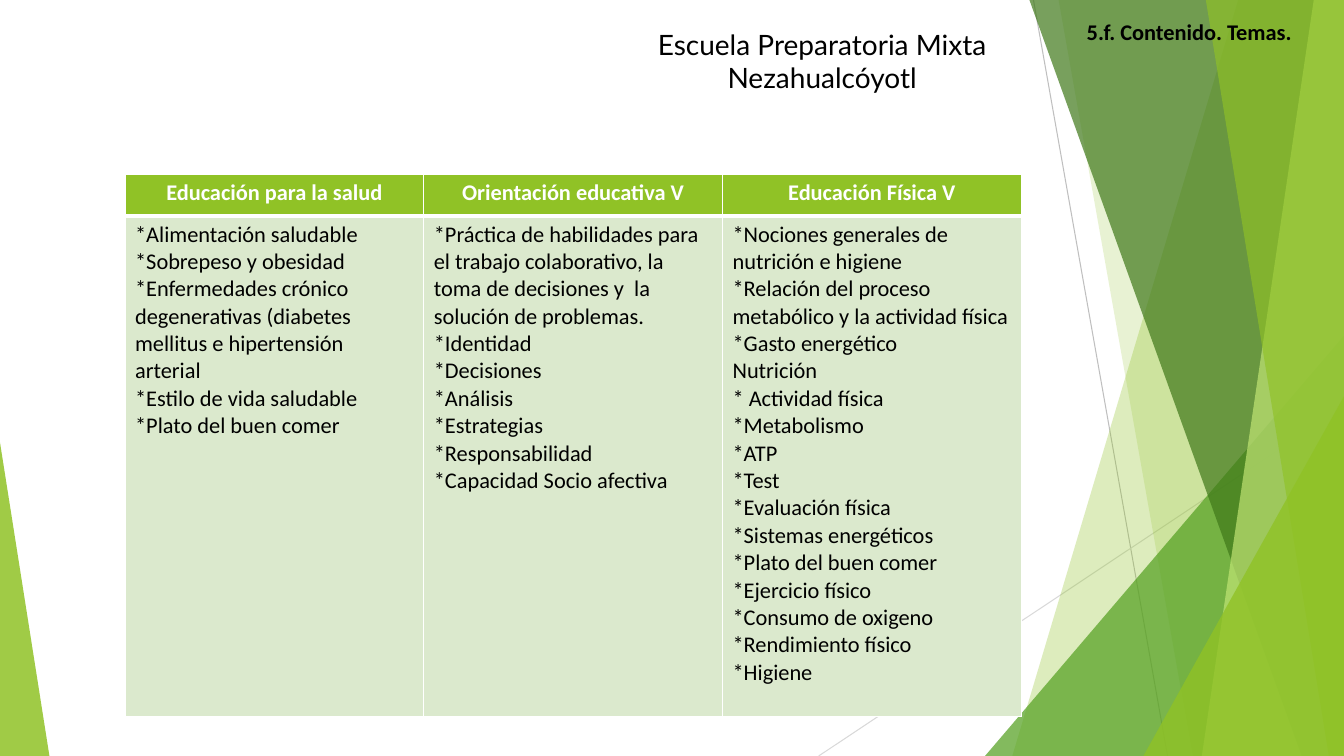
from dataclasses import dataclass

from pptx import Presentation
from pptx import util as u
from pptx.dml.color import RGBColor
from pptx.enum import shapes, text
from pptx.oxml import ns, xmlchemy


@dataclass(frozen=True)
class Theme:
    white: str = "FFFFFF"
    black: str = "000000"
    lime: str = "90C226"
    green: str = "54A021"
    dark: str = "3F7819"
    pale: str = "C0E474"
    cell: str = "DBE9CD"
    grey: str = "BFBFBF"
    light_grey: str = "D9D9D9"
    font: str = "Calibri"
    title_font: str = "Lato"
    body_size: int = 16
    title_size: int = 20


T = Theme()
W, H = 13.33, 7.5

TOPICS = {
    "Educación para la salud": [
        "*Alimentación saludable",
        "*Sobrepeso y obesidad",
        "*Enfermedades crónico degenerativas (diabetes mellitus e hipertensión arterial",
        "*Estilo de vida saludable",
        "*Plato del buen comer",
    ],
    "Orientación educativa V": [
        "*Práctica de habilidades para el trabajo colaborativo, la toma de decisiones y  la "
        "solución de problemas.",
        "*Identidad",
        "*Decisiones",
        "*Análisis",
        "*Estrategias",
        "*Responsabilidad",
        "*Capacidad Socio afectiva",
    ],
    "Educación Física V": [
        "*Nociones generales de nutrición e higiene",
        "*Relación del proceso metabólico y la actividad física",
        "*Gasto energético",
        "Nutrición",
        "* Actividad física",
        "*Metabolismo",
        "*ATP",
        "*Test",
        "*Evaluación física",
        "*Sistemas energéticos",
        "*Plato del buen comer",
        "*Ejercicio físico",
        "*Consumo de oxigeno",
        "*Rendimiento físico",
        "*Higiene",
    ],
}


def rgb(color):
    return RGBColor.from_string(color)


def sub(parent, tag, **attrs):
    el = xmlchemy.OxmlElement(tag)
    for name, value in attrs.items():
        el.set(name, str(value))
    parent.append(el)
    return el


def write(tf, lines, *, size=T.body_size, font=T.font, color=T.black, bold=False,
          align=text.PP_ALIGN.LEFT):
    for i, line in enumerate(lines):
        p = tf.paragraphs[0] if i == 0 else tf.add_paragraph()
        p.alignment = align
        r = p.add_run()
        r.text = line
        r.font.size, r.font.name, r.font.bold = u.Pt(size), font, bold
        r.font.color.rgb = rgb(color)


def paint(sp, color, opacity):
    sp.shadow.inherit = False
    sp.line.fill.background()
    sp.fill.solid()
    sp.fill.fore_color.rgb = rgb(color)
    clr = sp._element.spPr.find(".//" + ns.qn("a:srgbClr"))
    sub(clr, "a:alpha", val=opacity * 1000)


def ray(s, x1, y1, x2, y2, color):
    c = s.shapes.add_connector(shapes.MSO_CONNECTOR.STRAIGHT,
                               *map(u.Inches, (x1, y1, x2, y2)))
    c.line.color.rgb = rgb(color)
    c.line.width = u.Pt(0.75)
    sub(c._element.spPr, "a:effectLst")


def band(s, top_x, bottom_x, color, opacity):
    """Full-height band from a slanted left side to the right slide edge."""
    corners = [(top_x, 0), (W, 0), (W, H), (bottom_x, H)]
    points = [(u.Inches(x), u.Inches(y)) for x, y in corners]
    fb = s.shapes.build_freeform(*points[0], scale=1.0)
    fb.add_line_segments(points[1:], close=True)
    paint(fb.convert_to_shape(), color, opacity)


def corner(s, x, y, w, apex, color, opacity):
    """Right triangle standing on the bottom slide edge."""
    sp = s.shapes.add_shape(shapes.MSO_SHAPE.ISOSCELES_TRIANGLE,
                            *map(u.Inches, (x, y, w, H - y)))
    sp.adjustments[0] = apex
    paint(sp, color, opacity)


def backdrop(s):
    ray(s, 10.25, 0, 11.58, H, T.grey)
    ray(s, W, 4.03, 8.12, H, T.light_grey)
    band(s, 12.28, 10.04, T.lime, 30)
    band(s, 10.5, 11.83, T.lime, 20)
    corner(s, 9.77, 3.33, 3.56, 1, T.green, 72)
    band(s, 10.21, 12.91, T.dark, 70)
    band(s, 13.03, 11.92, T.pale, 70)
    band(s, 11.96, 13.18, T.lime, 65)
    corner(s, 11.34, 3.93, 1.99, 1, T.lime, 80)
    corner(s, 0, 4.39, 0.49, 0, T.lime, 85)


def format_cell(cell, fill, bottom=1, top=1):
    # Borders come before the fill in the cell properties
    tc_pr = cell._tc.get_or_add_tcPr()
    for side, width in {"L": 1, "R": 1, "T": top, "B": bottom}.items():
        ln = sub(tc_pr, "a:ln" + side, w=u.Pt(width))
        sub(sub(ln, "a:solidFill"), "a:srgbClr", val=T.white)
    cell.fill.solid()
    cell.fill.fore_color.rgb = rgb(fill)


def topics_table(s, x, y, w, header_h, body_h):
    frame = s.shapes.add_table(2, len(TOPICS), *map(u.Inches, (x, y, w, header_h + body_h)))
    tbl = frame.table
    tbl.horz_banding = False
    tbl.rows[0].height, tbl.rows[1].height = u.Inches(header_h), u.Inches(body_h)
    for i, (subject, topics) in enumerate(TOPICS.items()):
        tbl.columns[i].width = u.Inches(w / len(TOPICS))
        head, body = tbl.cell(0, i), tbl.cell(1, i)
        format_cell(head, T.lime, bottom=3)
        format_cell(body, T.cell, top=3)
        write(head.text_frame, [subject], color=T.white, bold=True,
              align=text.PP_ALIGN.CENTER)
        write(body.text_frame, topics)


def school_title(s, x, y, w, h):
    sp = s.shapes.title
    sp.left, sp.top, sp.width, sp.height = map(u.Inches, (x, y, w, h))
    tf = sp.text_frame
    tf.word_wrap = True
    tf.vertical_anchor = text.MSO_ANCHOR.TOP
    write(tf, ["Escuela Preparatoria Mixta Nezahualcóyotl"], size=T.title_size,
          font=T.title_font, align=text.PP_ALIGN.CENTER)


def section_label(s, x, y, w, h):
    tf = s.shapes.add_textbox(*map(u.Inches, (x, y, w, h))).text_frame
    tf.word_wrap = False
    write(tf, ["5.f. Contenido. Temas."], bold=True)


def main():
    prs = Presentation()
    prs.slide_width, prs.slide_height = u.Inches(W), u.Inches(H)
    s = prs.slides.add_slide(prs.slide_layouts[5])
    s.background.fill.solid()
    s.background.fill.fore_color.rgb = rgb(T.white)
    backdrop(s)
    topics_table(s, 1.24, 1.73, 8.89, 0.41, 4.97)
    school_title(s, 5.98, 0.22, 4.35, 0.77)
    section_label(s, 10.68, 0.13, 2.26, 0.37)
    prs.save("out.pptx")


if __name__ == "__main__":
    main()
